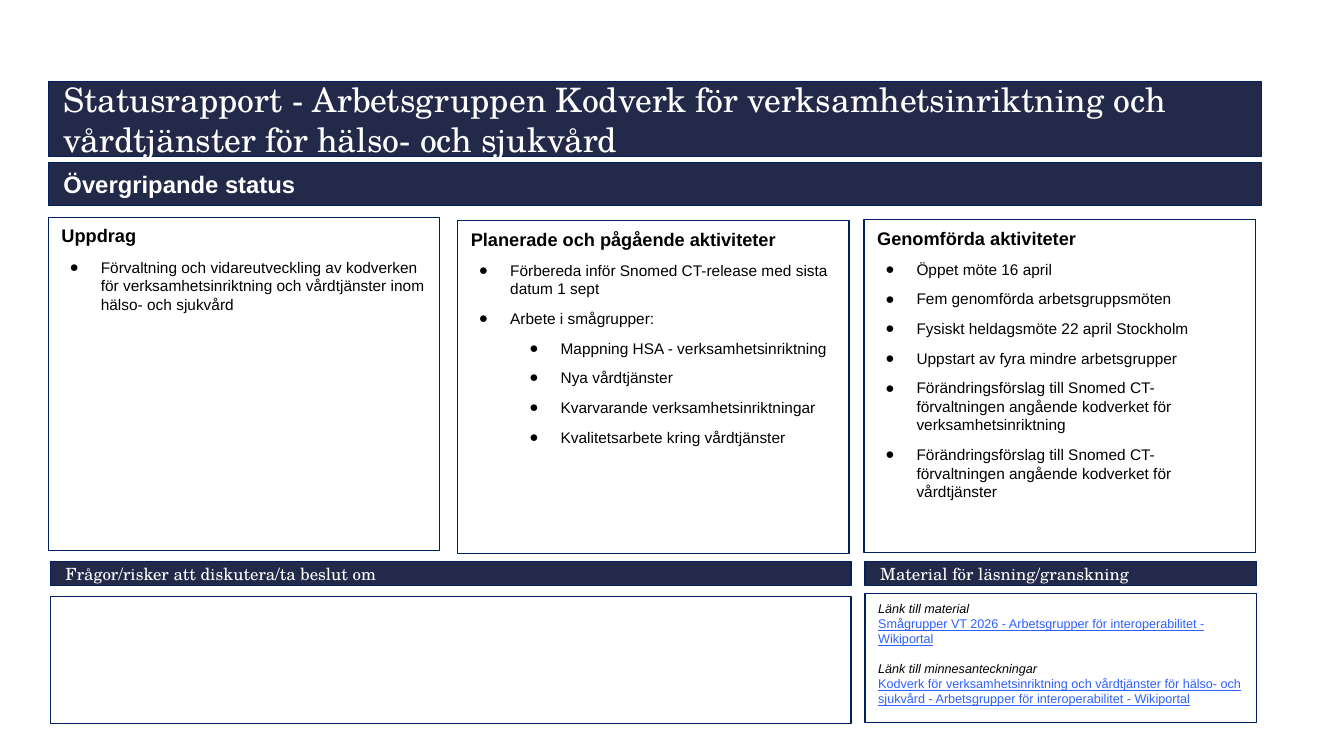
from lxml.etree import SubElement
from pptx import Presentation
from pptx.dml.color import RGBColor
from pptx.enum.shapes import MSO_SHAPE
from pptx.enum.text import MSO_ANCHOR, MSO_AUTO_SIZE, PP_ALIGN
from pptx.oxml.ns import qn
from pptx.util import Inches, Pt

NAVY = RGBColor(0x23, 0x29, 0x48)
BORDER = RGBColor(0x00, 0x20, 0x60)
LINK = RGBColor(0x2E, 0x60, 0xFF)
WHITE = RGBColor(0xFF, 0xFF, 0xFF)
BLACK = RGBColor(0x00, 0x00, 0x00)
SANS = "Arial"
SERIF = "TeX Gyre Schola"

CARD_WIDTH, CARD_HEIGHT = 3.88, 3.3
LEFT_WIDTH, FULL_WIDTH = 7.94, 12.03

# Each activity is (indent level, text)
MISSION = [
    (0, "Förvaltning och vidareutveckling av kodverken för verksamhetsinriktning "
        "och vårdtjänster inom hälso- och sjukvård"),
]
PLANNED = [
    (0, "Förbereda inför Snomed CT-release med sista datum 1 sept"),
    (0, "Arbete i smågrupper:"),
    (1, "Mappning HSA - verksamhetsinriktning"),
    (1, "Nya vårdtjänster"),
    (1, "Kvarvarande verksamhetsinriktningar"),
    (1, "Kvalitetsarbete kring vårdtjänster"),
]
COMPLETED = [
    (0, "Öppet möte 16 april"),
    (0, "Fem genomförda arbetsgruppsmöten"),
    (0, "Fysiskt heldagsmöte 22 april Stockholm"),
    (0, "Uppstart av fyra mindre arbetsgrupper"),
    (0, "Förändringsförslag till Snomed CT-förvaltningen angående kodverket "
        "för verksamhetsinriktning"),
    (0, "Förändringsförslag till Snomed CT-förvaltningen angående kodverket "
        "för vårdtjänster"),
]
MATERIALS = [
    ("Länk till material",
     "Smågrupper VT 2026 - Arbetsgrupper för interoperabilitet - Wikiportal"),
    ("Länk till minnesanteckningar",
     "Kodverk för verksamhetsinriktning och vårdtjänster för hälso- och sjukvård "
     "- Arbetsgrupper för interoperabilitet - Wikiportal"),
]


def style_box(shape, box, fill, anchor, inset_x, inset_y):
    """Place a shape in its box and set fill, border and text margins."""
    shape.left, shape.top, shape.width, shape.height = map(Inches, box)
    shape.fill.solid()
    shape.fill.fore_color.rgb = fill
    shape.line.color.rgb = BORDER
    shape.line.width = Pt(1)
    frame = shape.text_frame
    frame.word_wrap = True
    frame.auto_size = MSO_AUTO_SIZE.NONE
    frame.vertical_anchor = anchor
    frame.margin_left = frame.margin_right = Inches(inset_x)
    frame.margin_top = frame.margin_bottom = Inches(inset_y)
    return frame


def add_rectangle(slide):
    rectangle = slide.shapes.add_shape(MSO_SHAPE.RECTANGLE, 0, 0, 0, 0)
    rectangle.shadow.inherit = False
    return rectangle


def write_paragraph(frame, text, size, color=BLACK, font=SANS, bold=False,
                    italic=False, underline=False, before=0, level=None):
    """Write the next paragraph; a level of None means no bullet."""
    paragraph = frame.paragraphs[0]
    if paragraph.text:
        paragraph = frame.add_paragraph()
    paragraph.text = text
    properties = paragraph._p.get_or_add_pPr()
    if level is None:
        properties.set("marL", "0")
        properties.set("indent", "0")
        SubElement(properties, qn("a:buNone"))
    else:
        paragraph.level = level
        properties.set("marL", str(Inches(0.39 + 0.5 * level)))
        properties.set("indent", str(Inches(-0.31)))
        SubElement(properties, qn("a:buFont"), typeface=SANS)
        SubElement(properties, qn("a:buChar"), char="●")
    paragraph.alignment = PP_ALIGN.LEFT
    paragraph.space_before = Pt(before)
    paragraph.space_after = Pt(0)
    paragraph.line_spacing = 1.0
    style = paragraph.font
    style.name, style.size = font, Pt(size)
    style.bold, style.italic, style.underline = bold, italic, underline
    style.color.rgb = color


def fill_band(shape, box, text, size, font=SERIF, bold=False):
    frame = style_box(shape, box, NAVY, MSO_ANCHOR.MIDDLE, 0.15, 0.13)
    write_paragraph(frame, text, size, WHITE, font, bold)


def fill_activity_card(placeholder, left, top, heading, activities):
    box = (left, top, CARD_WIDTH, CARD_HEIGHT)
    frame = style_box(placeholder, box, WHITE, MSO_ANCHOR.TOP, 0.13, 0.07)
    write_paragraph(frame, heading, 13, bold=True)
    for level, activity in activities:
        write_paragraph(frame, activity, 11, before=8, level=level)


def fill_materials(placeholder, box):
    frame = style_box(placeholder, box, WHITE, MSO_ANCHOR.TOP, 0.13, 0.07)
    for index, (label, link) in enumerate(MATERIALS):
        write_paragraph(frame, label, 9, italic=True, before=10.5 if index else 0)
        write_paragraph(frame, link, 9, LINK, underline=True)


def build_status_report(slide):
    title, *bodies = [p for p in slide.placeholders if p.placeholder_format.idx < 5]
    mission, planned, completed, materials = bodies

    fill_band(title, (0.48, 0.81, FULL_WIDTH, 0.74),
              "Statusrapport - Arbetsgruppen Kodverk för verksamhetsinriktning "
              "och vårdtjänster för hälso- och sjukvård", 24)
    fill_band(add_rectangle(slide), (0.48, 1.61, FULL_WIDTH, 0.43),
              "Övergripande status", 17, SANS, True)

    fill_activity_card(mission, 0.48, 2.16, "Uppdrag", MISSION)
    fill_activity_card(planned, 4.54, 2.19, "Planerade och pågående aktiviteter", PLANNED)
    fill_activity_card(completed, 8.57, 2.18, "Genomförda aktiviteter", COMPLETED)

    fill_band(add_rectangle(slide), (0.5, 5.57, LEFT_WIDTH, 0.24),
              "Frågor/risker att diskutera/ta beslut om", 12)
    style_box(add_rectangle(slide), (0.5, 5.92, LEFT_WIDTH, 1.26),
              WHITE, MSO_ANCHOR.TOP, 0.13, 0.07)
    fill_band(add_rectangle(slide), (8.58, 5.57, CARD_WIDTH, 0.24),
              "Material för läsning/granskning", 12)
    fill_materials(materials, (8.58, 5.89, CARD_WIDTH, 1.28))


def main():
    presentation = Presentation()
    presentation.slide_width = Inches(13.33)
    presentation.slide_height = Inches(7.5)
    comparison_layout = presentation.slide_layouts[4]
    build_status_report(presentation.slides.add_slide(comparison_layout))
    presentation.save("out.pptx")


if __name__ == "__main__":
    main()
